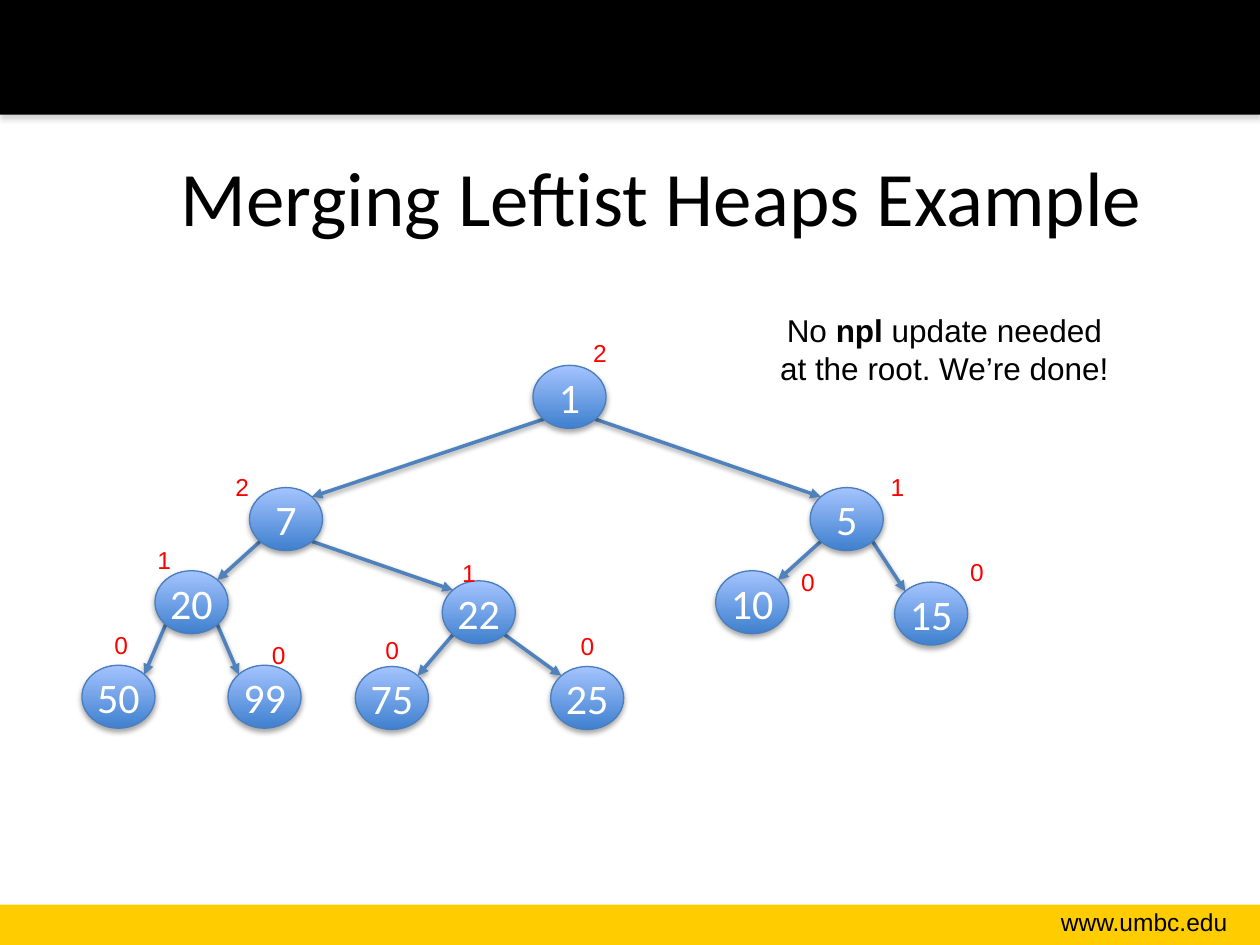
"""Build the slide on merging leftist heaps."""
from dataclasses import dataclass
from math import sqrt

from lxml.etree import SubElement
from pptx import Presentation
from pptx.dml.color import RGBColor as Rgb
from pptx.enum.shapes import MSO_CONNECTOR as Link, MSO_SHAPE as Kind
from pptx.enum.text import MSO_ANCHOR as Anchor, MSO_AUTO_SIZE as Fit, PP_ALIGN as Align
from pptx.oxml.ns import qn
from pptx.shapes.autoshape import Shape
from pptx.slide import Slide
from pptx.util import Inches, Pt

HUES = {
    "black": "000000", "white": "FFFFFF", "gold": "FFCC00", "red": "FF0000",
    "gray": "808080", "low": "3F80CE", "high": "A4C4FF",
    "rim": "4B7EBC", "edge": "4F81BD",
}
WIDE, TALL = 0.58, 0.5


@dataclass(frozen=True)
class Node:
    """A heap node, its corner, its npl mark and its children."""
    key: str
    x: float
    y: float
    npl: str
    mark: tuple[float, float]
    kids: tuple[str, ...] = ()


NODES = (
    Node("1", 4.23, 2.9, "2", (4.61, 2.63), ("7", "5")),
    Node("7", 1.98, 3.87, "2", (1.77, 3.7), ("20", "22")),
    Node("5", 6.43, 3.87, "1", (6.97, 3.7), ("10", "15")),
    Node("20", 1.23, 4.53, "1", (1.15, 4.28), ("50", "99")),
    Node("22", 3.51, 4.61, "1", (3.57, 4.38), ("75", "25")),
    Node("10", 5.68, 4.53, "0", (6.26, 4.45)),
    Node("15", 7.1, 4.62, "0", (7.6, 4.37)),
    Node("50", 0.65, 5.28, "0", (0.81, 4.95)),
    Node("99", 1.81, 5.28, "0", (2.06, 5.03)),
    Node("75", 2.82, 5.29, "0", (2.96, 4.99)),
    Node("25", 4.37, 5.29, "0", (4.51, 4.96)),
)


def hue(name: str) -> Rgb:
    """Look up a colour."""
    return Rgb.from_string(HUES[name])


def style(font, face: str, size: int, tint: str) -> None:
    """Set face, size and colour of a font."""
    font.name, font.size = face, Pt(size)
    font.color.rgb = hue(tint)


def shade(item, tint: str, alpha: int, dist: float) -> None:
    """Give a shape or connector a soft shadow below it."""
    props = item._element.spPr
    group = props.find(qn("a:effectLst"))
    if group is None:
        group = SubElement(props, qn("a:effectLst"))
    cast = SubElement(group, qn("a:outerShdw"), blurRad=str(Pt(3.1)),
                      dist=str(Pt(dist)), dir="5400000", rotWithShape="0")
    color = SubElement(cast, qn("a:srgbClr"), val=HUES[tint])
    SubElement(color, qn("a:alpha"), val=str(alpha * 1000))


def band(slide: Slide, y: float, high: float, tint: str) -> Shape:
    """Draw a plain band across the slide."""
    bar = slide.shapes.add_shape(Kind.RECTANGLE, 0, Inches(y), Inches(10), Inches(high))
    bar.shadow.inherit = False
    bar.fill.solid()
    bar.fill.fore_color.rgb = hue(tint)
    bar.line.fill.background()
    return bar


def label(slide: Slide, place: tuple[float, ...], runs: tuple[str, ...],
          size: int, tint: str, align: Align) -> Shape:
    """Add a text box with one paragraph."""
    box = slide.shapes.add_textbox(*map(Inches, place))
    frame = box.text_frame
    frame.word_wrap = True
    frame.auto_size = Fit.SHAPE_TO_FIT_TEXT
    para = frame.paragraphs[0]
    para.alignment = align
    for text in runs:
        para.add_run().text = text
    style(para.font, "Arial", size, tint)
    return box


def draw_node(slide: Slide, node: Node) -> None:
    """Draw a node with its key and npl mark."""
    ball = slide.shapes.add_shape(
        Kind.OVAL, *map(Inches, (node.x, node.y, WIDE, TALL)))
    ball.shadow.inherit = False
    ball.fill.gradient()
    ball.fill.gradient_angle = 90
    for stop, tint, spot in zip(ball.fill.gradient_stops, ("low", "high"), (0, 1)):
        stop.color.rgb, stop.position = hue(tint), spot
    ball.line.color.rgb, ball.line.width = hue("rim"), Pt(0.75)
    shade(ball, "black", 35, 1.8)
    frame = ball.text_frame
    frame.word_wrap, frame.vertical_anchor = False, Anchor.MIDDLE
    para = frame.paragraphs[0]
    para.text, para.alignment = node.key, Align.CENTER
    style(para.font, "Calibri", 24, "white")
    label(slide, (*node.mark, 0.29, 0.34), (node.npl,), 14, "red", Align.LEFT)


def draw_edge(slide: Slide, top: Node, kid: Node) -> None:
    """Draw an arrow between the facing diagonal points of two nodes."""
    side = 1 if kid.x > top.x else -1
    dx, dy = WIDE / sqrt(8), TALL / sqrt(8)
    ends = (top.x + WIDE / 2 + side * dx, top.y + TALL / 2 + dy,
            kid.x + WIDE / 2 - side * dx, kid.y + TALL / 2 - dy)
    line = slide.shapes.add_connector(Link.STRAIGHT, *map(Inches, ends))
    line.line.color.rgb, line.line.width = hue("edge"), Pt(2)
    SubElement(line.line._get_or_add_ln(), qn("a:tailEnd"), type="triangle")
    shade(line, "black", 38, 1.6)


def main() -> None:
    """Build and save the slide."""
    deck = Presentation()
    deck.slide_width, deck.slide_height = Inches(10), Inches(7.5)
    slide = deck.slides.add_slide(deck.slide_layouts[5])

    band(slide, 7.18, 0.32, "gold")
    shade(band(slide, 0, 0.91, "black"), "gray", 35, 1.8)
    label(slide, (7.85, 7.15, 1.99, 0.34), ("www.umbc.edu",), 14, "black", Align.RIGHT)

    title = slide.shapes.title
    title.left, title.top, title.width, title.height = map(Inches, (0.75, 0.93, 9, 1.25))
    title.text_frame.vertical_anchor = Anchor.MIDDLE
    para = title.text_frame.paragraphs[0]
    para.text, para.alignment = "Merging Leftist Heaps Example", Align.CENTER
    style(para.font, "Calibri", 44, "black")

    heap = {node.key: node for node in NODES}
    for node in NODES:
        for key in node.kids:
            draw_edge(slide, node, heap[key])
    for node in NODES:
        draw_node(slide, node)

    note = label(slide, (6.08, 2.42, 2.83, 0.71),
                 ("No ", "npl", " update needed at the root. We’re done!"),
                 18, "black", Align.CENTER)
    note.text_frame.paragraphs[0].runs[1].font.bold = True
    deck.save("out.pptx")


if __name__ == "__main__":
    main()
